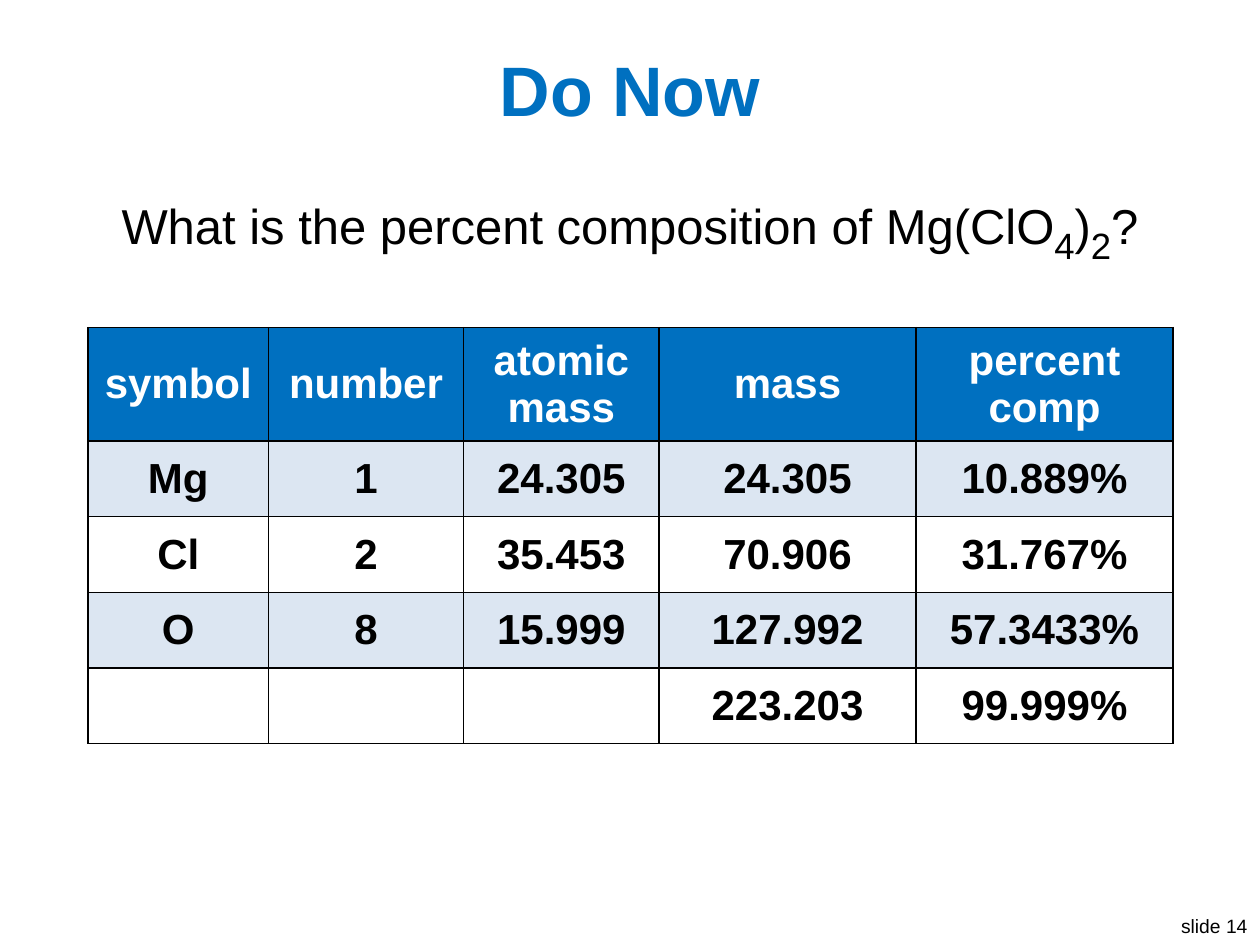
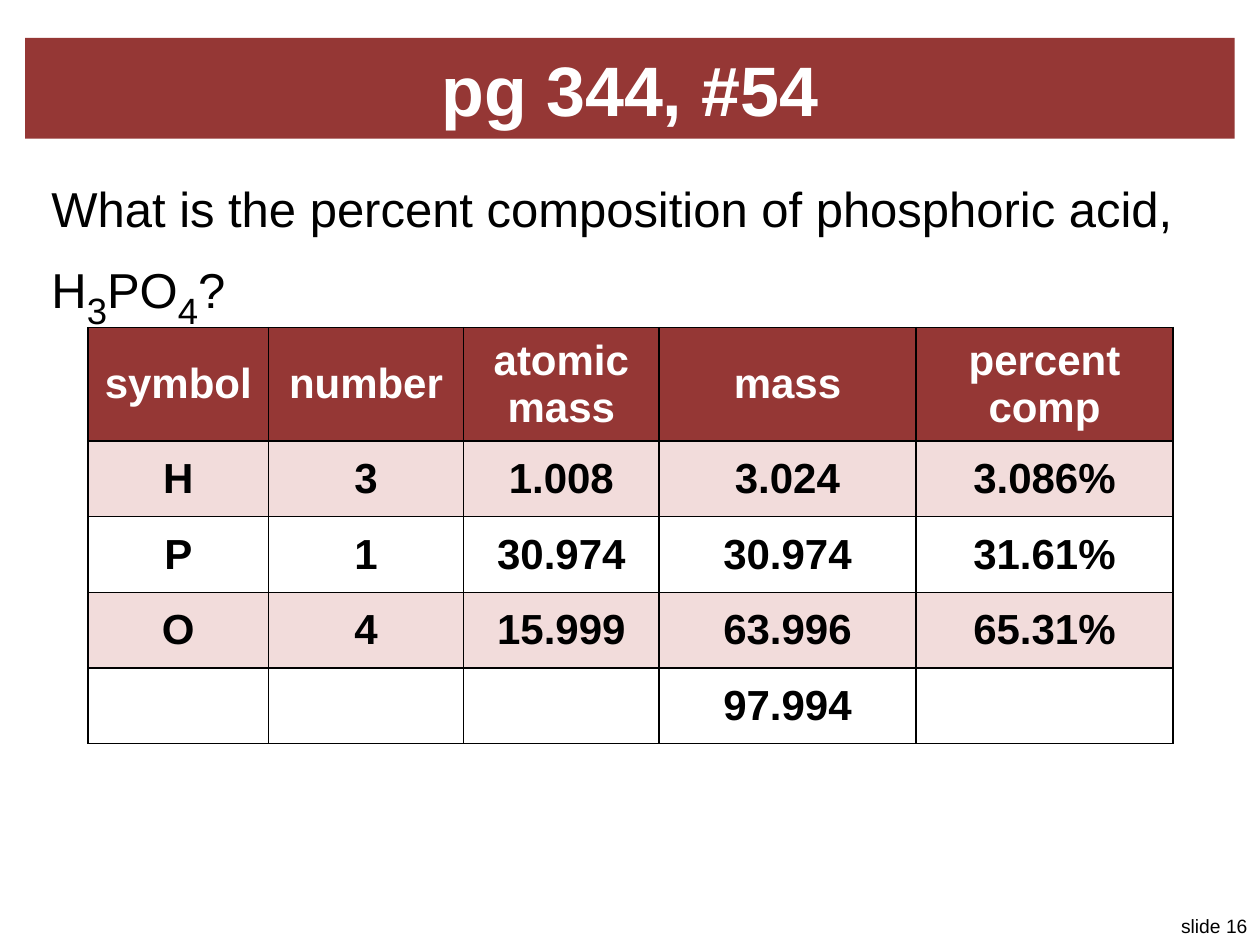
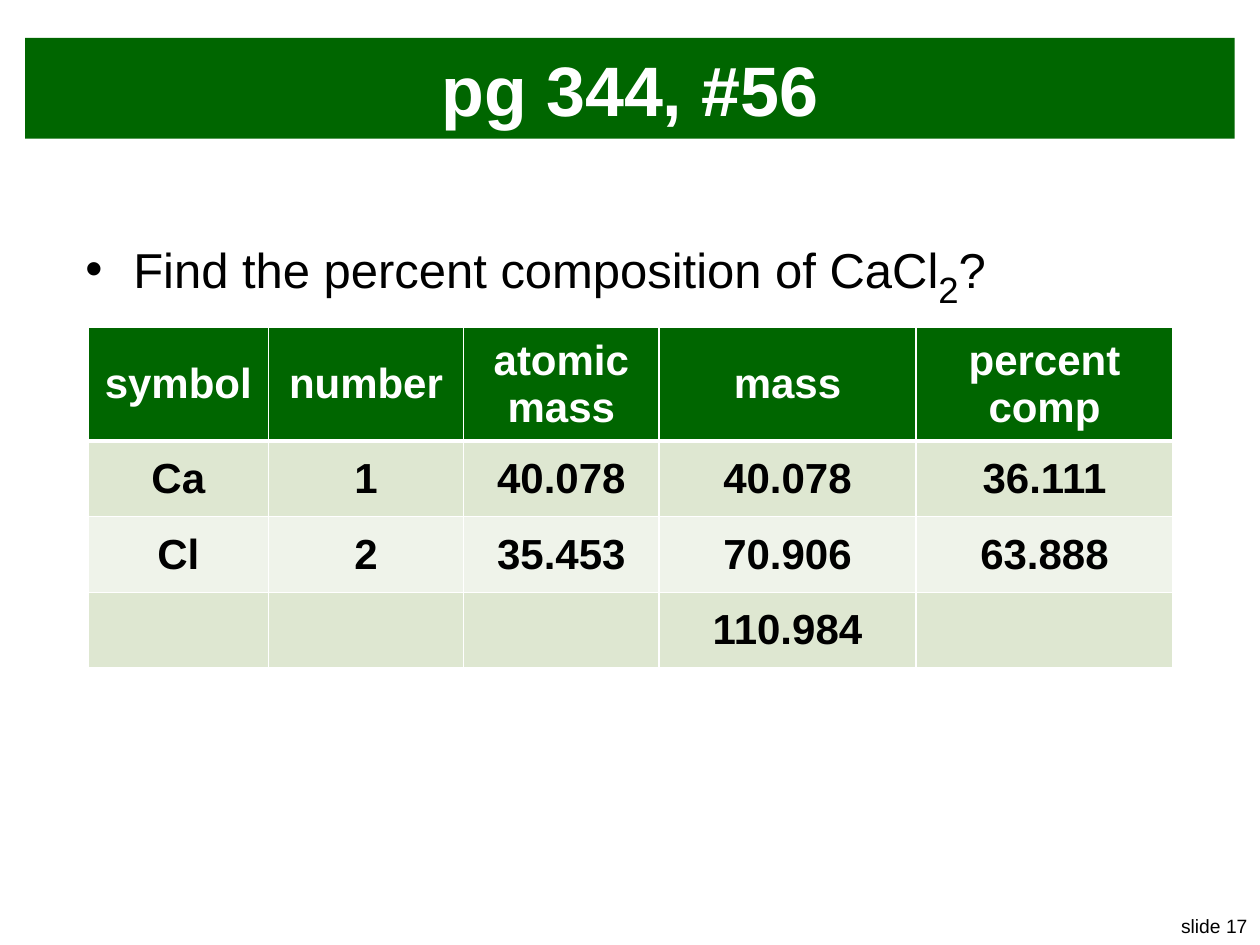
from lxml.etree import SubElement
from pptx import Presentation
from pptx.dml.color import RGBColor
from pptx.enum.shapes import MSO_SHAPE
from pptx.enum.text import MSO_ANCHOR, PP_ALIGN
from pptx.oxml.ns import qn
from pptx.util import Inches, Pt

COLORS = {
    "black": "000000", "white": "FFFFFF",
    "blue": "0070C0", "pale_blue": "DCE6F2",
    "red": "953735", "pale_red": "F2DCDB",
    "green": "006600", "pale_green": "DEE7D1", "faint_green": "EFF3EA",
}
FONT = "Arial"
TITLE_AREA = (0.2, 0.3, 9.6, 0.8)
QUESTION_AREA = (0.31, 1.32, 9.38, 1.08)
BULLET_AREA = (0.58, 1.67, 8.85, 0.74)
NUMBER_AREA = (9.25, 7.21, 0.75, 0.29)
HEADINGS = ["symbol", "number", "atomic mass", "mass", "percent comp"]
COLUMN_WIDTHS = [1.43, 1.55, 1.55, 2.04, 2.04]
ROW_HEIGHT = 0.6

SLIDES = [
    {
        "number": 14, "title": "Do Now", "accent": "blue", "band": False,
        "question": ["What is the percent composition of Mg(ClO", "4", ")", "2", "?"],
        "align": PP_ALIGN.CENTER, "bullet": False,
        "stripes": ["pale_blue", None], "border": "black", "rule": 1,
        "rows": [
            ["Mg", "1", "24.305", "24.305", "10.889%"],
            ["Cl", "2", "35.453", "70.906", "31.767%"],
            ["O", "8", "15.999", "127.992", "57.3433%"],
            ["", "", "", "223.203", "99.999%"],
        ],
    },
    {
        "number": 16, "title": "pg 344, #54", "accent": "red", "band": True,
        "question": ["What is the percent composition of phosphoric acid, H", "3", "PO", "4", "?"],
        "align": PP_ALIGN.LEFT, "bullet": False,
        "stripes": ["pale_red", None], "border": "black", "rule": 1,
        "rows": [
            ["H", "3", "1.008", "3.024", "3.086%"],
            ["P", "1", "30.974", "30.974", "31.61%"],
            ["O", "4", "15.999", "63.996", "65.31%"],
            ["", "", "", "97.994", ""],
        ],
    },
    {
        "number": 17, "title": "pg 344, #56", "accent": "green", "band": True,
        "question": ["Find the percent composition of CaCl", "2", "?"],
        "align": PP_ALIGN.LEFT, "bullet": True,
        "stripes": ["pale_green", "faint_green"], "border": "white", "rule": 3,
        "rows": [
            ["Ca", "1", "40.078", "40.078", "36.111"],
            ["Cl", "2", "35.453", "70.906", "63.888"],
            ["", "", "", "110.984", ""],
        ],
    },
]


def rgb(name):
    return RGBColor.from_string(COLORS[name])


def inches(area):
    return [Inches(value) for value in area]


def set_values(target, **values):
    for name, value in values.items():
        setattr(target, name, value)


def add_span(para, text, size, color="black", bold=False):
    span = para.add_run()
    span.text = text
    set_values(span.font, name=FONT, size=Pt(size), bold=bold)
    span.font.color.rgb = rgb(color)
    return span


def add_title(page, text, accent, band):
    """Add a white title on an accent band, or an accent title without one."""
    if band:
        box = page.shapes.add_shape(MSO_SHAPE.RECTANGLE, *inches(TITLE_AREA))
        box.shadow.inherit = False
        box.fill.solid()
        box.fill.fore_color.rgb = rgb(accent)
        box.line.fill.background()
    else:
        box = page.shapes.add_textbox(*inches(TITLE_AREA))
    set_values(box.text_frame, word_wrap=True, vertical_anchor=MSO_ANCHOR.MIDDLE)
    para = box.text_frame.paragraphs[0]
    para.alignment = PP_ALIGN.CENTER
    add_span(para, text, 40, "white" if band else accent, bold=True)


def add_question(page, parts, align, bullet):
    """Add the question; every second part is a subscript."""
    box = page.shapes.add_textbox(*inches(BULLET_AREA if bullet else QUESTION_AREA))
    box.text_frame.word_wrap = True
    para = box.text_frame.paragraphs[0]
    set_values(para, alignment=align, space_before=Pt(12), line_spacing=1.1)
    if bullet:
        properties = para._p.get_or_add_pPr()
        properties.set("marL", str(Inches(0.38)))
        properties.set("indent", str(-Inches(0.38)))
        SubElement(properties, qn("a:buFont"), typeface=FONT)
        SubElement(properties, qn("a:buChar"), char="•")
    for index, part in enumerate(parts):
        subscript = index % 2 == 1
        span = add_span(para, part, 36 if subscript else 28)
        if subscript:
            span.font._element.set("baseline", "-25000")


def set_borders(cell, color, top=1, bottom=1):
    properties = cell._tc.get_or_add_tcPr()
    for side, width in (("L", 1), ("R", 1), ("T", top), ("B", bottom)):
        line = SubElement(properties, qn(f"a:ln{side}"), w=str(Pt(width)))
        fill = SubElement(line, qn("a:solidFill"))
        SubElement(fill, qn("a:srgbClr"), val=COLORS[color])


def fill_cell(cell, text, fill, color):
    cell.vertical_anchor = MSO_ANCHOR.MIDDLE
    if fill:
        cell.fill.solid()
        cell.fill.fore_color.rgb = rgb(fill)
    else:
        cell.fill.background()
    if text:
        para = cell.text_frame.paragraphs[0]
        para.alignment = PP_ALIGN.CENTER
        add_span(para, text, 24, color, bold=True)


def add_composition_table(page, rows, accent, stripes, border, rule):
    """Add the table; rule is the width of the line below the headings."""
    lines = [HEADINGS] + rows
    area = inches((0.7, 2.6, 8.6, ROW_HEIGHT * len(lines)))
    table = page.shapes.add_table(len(lines), len(HEADINGS), *area).table
    for column, width in zip(table.columns, COLUMN_WIDTHS):
        column.width = Inches(width)
    for row_index, texts in enumerate(lines):
        table.rows[row_index].height = Inches(ROW_HEIGHT)
        heading = row_index == 0
        fill = accent if heading else stripes[(row_index - 1) % 2]
        for column_index, text in enumerate(texts):
            cell = table.cell(row_index, column_index)
            set_borders(cell, border, top=rule if row_index == 1 else 1,
                        bottom=rule if heading else 1)
            fill_cell(cell, text, fill, "white" if heading else "black")


def add_slide_number(page, number):
    box = page.shapes.add_textbox(*inches(NUMBER_AREA))
    box.text_frame.word_wrap = False
    para = box.text_frame.paragraphs[0]
    para.alignment = PP_ALIGN.RIGHT
    add_span(para, f"slide {number}", 11)


def main():
    deck = Presentation()
    set_values(deck, slide_width=Inches(10), slide_height=Inches(7.5))
    for content in SLIDES:
        page = deck.slides.add_slide(deck.slide_layouts[6])
        add_slide_number(page, content["number"])
        add_title(page, content["title"], content["accent"], content["band"])
        add_composition_table(page, content["rows"], content["accent"],
                              content["stripes"], content["border"], content["rule"])
        add_question(page, content["question"], content["align"], content["bullet"])
    deck.save("out.pptx")


if __name__ == "__main__":
    main()
